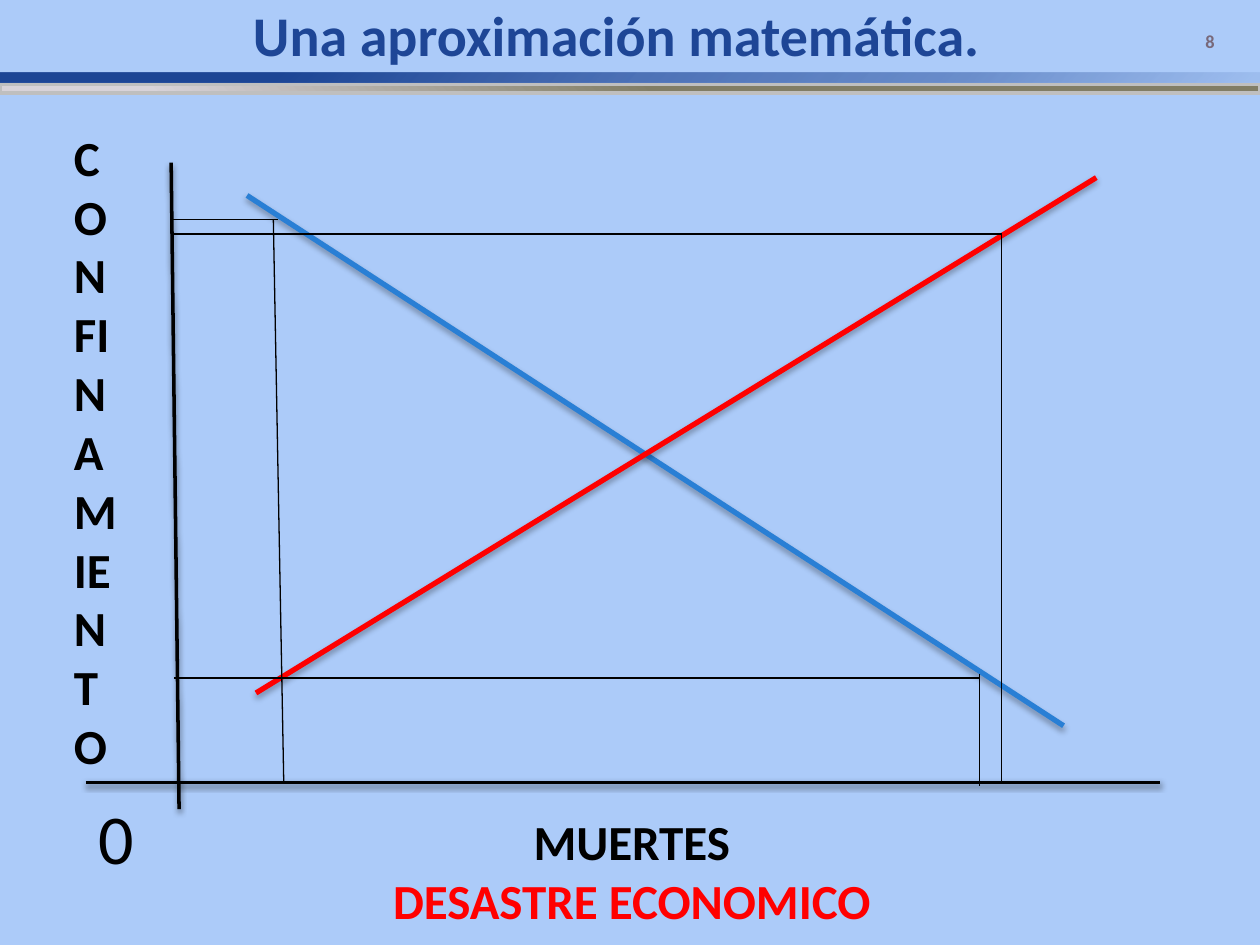
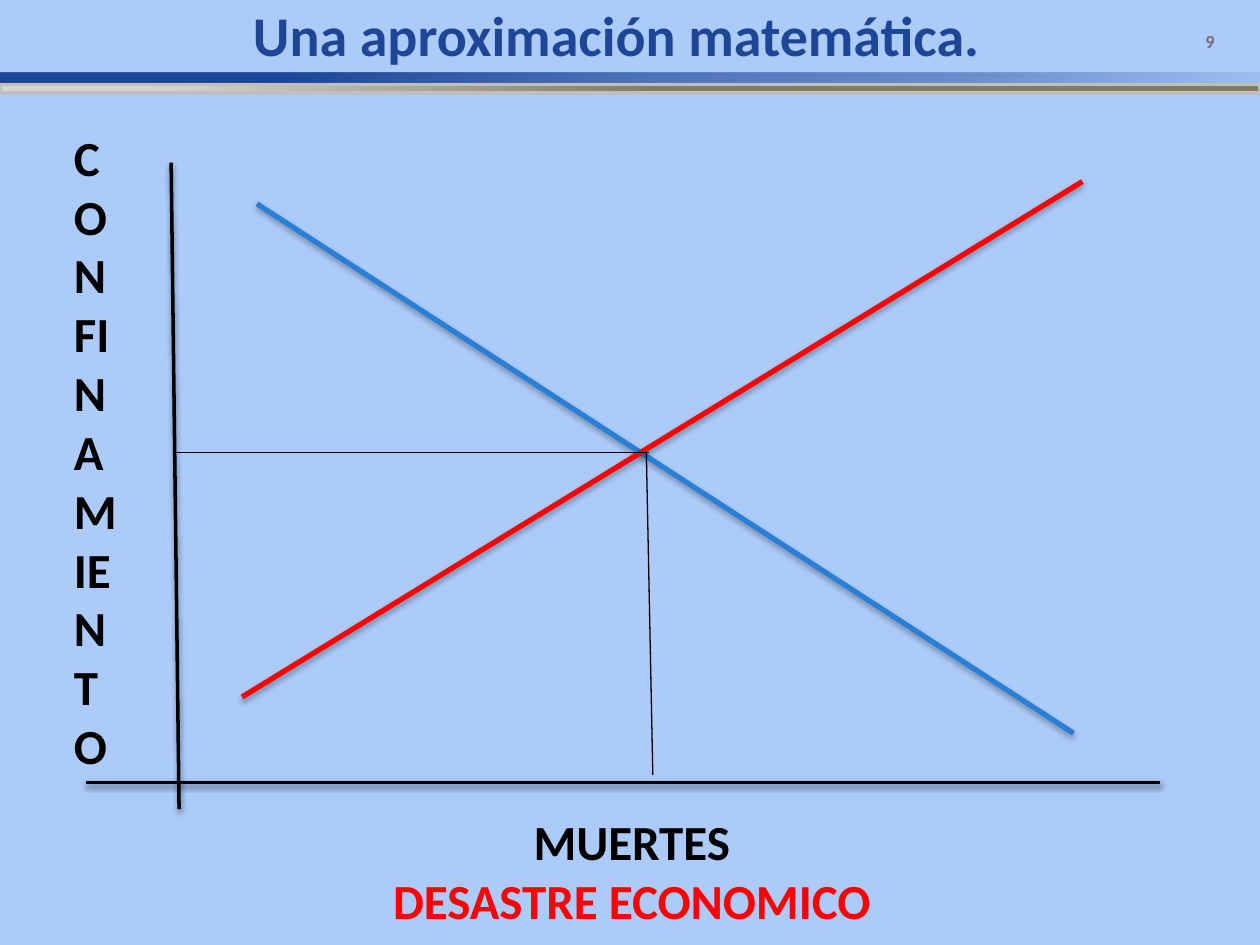
from dataclasses import dataclass

from pptx import Presentation
from pptx.dml.color import RGBColor
from pptx.enum.shapes import MSO_CONNECTOR, MSO_SHAPE
from pptx.enum.text import MSO_ANCHOR, MSO_AUTO_SIZE, PP_ALIGN
from pptx.oxml import parse_xml
from pptx.oxml.ns import nsdecls, qn
from pptx.slide import Slide
from pptx.util import Cm, Pt

FONT = "Calibri"
SKY = RGBColor(0xAC, 0xCB, 0xF9)
NAVY = RGBColor(0x1E, 0x46, 0x96)
DEEP_NAVY = RGBColor(0x1D, 0x46, 0x96)
OLIVE = RGBColor(0x81, 0x7D, 0x65)
PEARL = RGBColor(0xD8, 0xD3, 0xD9)
SILVER = RGBColor(0xBF, 0xBF, 0xBF)
MAUVE = RGBColor(0x78, 0x69, 0x7B)
BLUE = RGBColor(0x29, 0x7F, 0xD5)
RED = RGBColor(0xFF, 0x00, 0x00)
BLACK = RGBColor(0x00, 0x00, 0x00)

WIDTH, HEIGHT = 25.4, 19.05
BASELINE = 15.77


@dataclass(frozen=True)
class Stop:
    """One gradient stop; position and opacity are percentages."""
    position: int
    color: RGBColor
    opacity: int = 100


@dataclass(frozen=True)
class Band:
    """A full-width header band with a radial gradient from a top corner."""
    top: float
    height: float
    stops: tuple[Stop, ...]
    focus: str
    border: RGBColor | None = None


@dataclass(frozen=True)
class Stroke:
    """A line style; a shadow distance of zero means no shadow."""
    color: RGBColor
    width: float
    shadow_distance: int = 0
    shadow_opacity: int = 0


@dataclass(frozen=True)
class Segment:
    """A straight line between two points in centimetres."""
    start: tuple[float, float]
    end: tuple[float, float]
    stroke: Stroke


@dataclass(frozen=True)
class Label:
    """A text box whose lines each carry their own colour."""
    box: tuple[float, float, float, float]
    lines: tuple[tuple[str, RGBColor], ...]
    size: float
    bold: bool = True
    align: PP_ALIGN = PP_ALIGN.LEFT
    anchor: MSO_ANCHOR = MSO_ANCHOR.TOP
    grow: bool = True


@dataclass(frozen=True)
class Graph:
    """What differs between the slides."""
    number: int
    segments: tuple[Segment, ...]
    labels: tuple[Label, ...] = ()


AXIS = Stroke(BLACK, 2, 20000, 38)
DEATHS = Stroke(BLUE, 3, 23000, 35)
ECONOMY = Stroke(RED, 3, 23000, 35)
GUIDE = Stroke(BLACK, 0.75)

BANDS = (
    Band(1.47, 0.2, (Stop(22, DEEP_NAVY), Stop(50, NAVY, 67), Stop(77, NAVY, 45),
                     Stop(99, NAVY, 10)), 'r="100000" b="100000"'),
    Band(1.7, 0.18, (Stop(48, OLIVE), Stop(88, PEARL), Stop(100, PEARL)),
         'l="100000" b="100000"', SILVER),
)
AXES = (
    Segment((3.45, 3.28), (3.61, 16.31), AXIS),
    Segment((1.73, BASELINE), (23.39, BASELINE), AXIS),
)
TITLE = Label((1.47, -0.08, 21.92, 1.52), (("Una aproximación matemática.", NAVY),), 32,
              align=PP_ALIGN.CENTER, anchor=MSO_ANCHOR.MIDDLE, grow=False)
AXIS_LABELS = (
    Label((1.24, 2.44, 1.45, 13.41), (("CONFINAMIENTO", BLACK),), 28),
    Label((4.34, 16.23, 16.79, 2.64), (("MUERTES", BLACK), ("DESASTRE ECONOMICO", RED)), 28,
          align=PP_ALIGN.CENTER),
)
ORIGIN = Label((1.73, 15.9, 1.8, 1.96), (("0", BLACK),), 40, bold=False)

GRAPHS = (
    Graph(8, (
        Segment((4.98, 3.94), (21.44, 14.63), DEATHS),
        Segment((5.16, 13.97), (22.1, 3.58), ECONOMY),
        Segment((5.51, 4.42), (5.72, BASELINE), GUIDE),
        Segment((5.61, 4.42), (3.45, 4.42), GUIDE),
        Segment((19.74, 13.59), (19.74, 15.85), GUIDE),
        Segment((3.51, 4.72), (20.19, 4.72), GUIDE),
        Segment((20.19, 4.72), (20.19, BASELINE), GUIDE),
        Segment((3.51, 13.67), (19.74, 13.67), GUIDE),
    ), (ORIGIN,)),
    Graph(9, (
        Segment((5.18, 4.11), (21.64, 14.78), DEATHS),
        Segment((4.88, 14.05), (21.82, 3.66), ECONOMY),
        Segment((3.53, 9.12), (13.08, 9.12), GUIDE),
        Segment((13.03, 9.14), (13.16, 15.62), GUIDE),
    )),
)


def draw_band(slide: Slide, band: Band) -> None:
    """Draw a header band with its radial gradient."""
    shape = slide.shapes.add_shape(MSO_SHAPE.RECTANGLE, 0, Cm(band.top), Cm(WIDTH), Cm(band.height))
    shape.shadow.inherit = False
    shape.fill.background()
    stops = "".join(
        f'<a:gs pos="{stop.position * 1000}"><a:srgbClr val="{stop.color}">'
        f'<a:alpha val="{stop.opacity * 1000}"/></a:srgbClr></a:gs>'
        for stop in band.stops)
    gradient = parse_xml(
        f'<a:gradFill {nsdecls("a")} rotWithShape="1"><a:gsLst>{stops}</a:gsLst>'
        f'<a:path path="circle"><a:fillToRect {band.focus}/></a:path></a:gradFill>')
    properties = shape._element.spPr
    properties.replace(properties.find(qn("a:noFill")), gradient)
    if band.border is None:
        shape.line.fill.background()
    else:
        shape.line.color.rgb = band.border
        shape.line.width = Pt(2)


def draw_segment(slide: Slide, segment: Segment) -> None:
    """Draw a straight line with its optional shadow."""
    stroke = segment.stroke
    points = [Cm(value) for value in segment.start + segment.end]
    connector = slide.shapes.add_connector(MSO_CONNECTOR.STRAIGHT, *points)
    connector.line.color.rgb = stroke.color
    connector.line.width = Pt(stroke.width)
    shadow = ""
    if stroke.shadow_distance:
        shadow = (f'<a:outerShdw blurRad="40000" dist="{stroke.shadow_distance}" dir="5400000" '
                  f'rotWithShape="0"><a:srgbClr val="{BLACK}">'
                  f'<a:alpha val="{stroke.shadow_opacity * 1000}"/></a:srgbClr></a:outerShdw>')
    effects = parse_xml(f'<a:effectLst {nsdecls("a")}>{shadow}</a:effectLst>')
    connector._element.spPr.append(effects)


def draw_label(slide: Slide, label: Label) -> None:
    """Draw a wrapped text box."""
    frame = slide.shapes.add_textbox(*(Cm(value) for value in label.box)).text_frame
    frame.word_wrap = True
    frame.auto_size = MSO_AUTO_SIZE.SHAPE_TO_FIT_TEXT if label.grow else MSO_AUTO_SIZE.NONE
    frame.vertical_anchor = label.anchor
    frame.text = "\n".join(text for text, _ in label.lines)
    for paragraph, (_, color) in zip(frame.paragraphs, label.lines):
        paragraph.alignment = label.align
        paragraph.font.name = FONT
        paragraph.font.size = Pt(label.size)
        paragraph.font.bold = label.bold
        paragraph.font.color.rgb = color


def draw_graph(slide: Slide, graph: Graph) -> None:
    """Draw the shared header and axes, then the curves of one slide."""
    number = Label((24.05, 0.48, 1.35, 0.99), ((str(graph.number), MAUVE),), 10.5, grow=False)
    for band in BANDS:
        draw_band(slide, band)
    for label in (TITLE, number):
        draw_label(slide, label)
    for segment in AXES + graph.segments:
        draw_segment(slide, segment)
    for label in AXIS_LABELS + graph.labels:
        draw_label(slide, label)


def main() -> None:
    """Build and save the presentation."""
    presentation = Presentation()
    presentation.slide_width, presentation.slide_height = Cm(WIDTH), Cm(HEIGHT)
    background = presentation.slide_master.background.fill
    background.solid()
    background.fore_color.rgb = SKY
    for graph in GRAPHS:
        draw_graph(presentation.slides.add_slide(presentation.slide_layouts[6]), graph)
    presentation.save("out.pptx")


if __name__ == "__main__":
    main()
